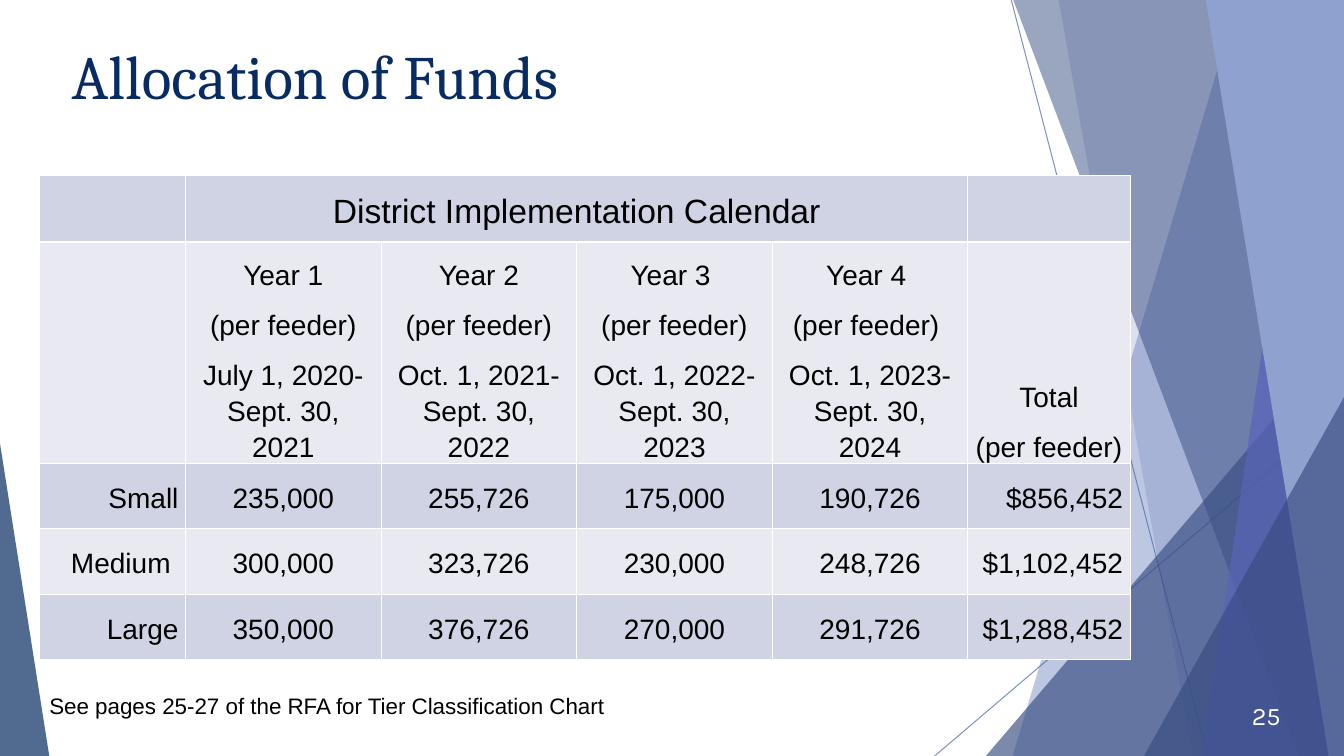
from dataclasses import dataclass

import pptx
import pptx.dml.color
import pptx.enum.shapes
import pptx.enum.text
import pptx.oxml
import pptx.oxml.ns
import pptx.util
from pptx.dml.color import RGBColor
from pptx.enum.text import MSO_ANCHOR, PP_ALIGN
from pptx.util import Inches

WHITE = RGBColor(0xFF, 0xFF, 0xFF)
BLACK = RGBColor(0x00, 0x00, 0x00)
NAVY = RGBColor(0x07, 0x2B, 0x62)
BLUE = RGBColor(0x4A, 0x66, 0xAC)
DEEP_BLUE = RGBColor(0x37, 0x4C, 0x81)
VIOLET = RGBColor(0x59, 0x63, 0xB8)
LIGHT_BLUE = RGBColor(0x8F, 0xA1, 0xCF)
BAND_DARK = RGBColor(0xD0, 0xD3, 0xE3)
BAND_LIGHT = RGBColor(0xE9, 0xEA, 0xF1)

RIGHT_EDGE = 13.33
FACET_BOTTOM = 7.51


@dataclass
class Ray:
    start: tuple[float, float]
    end: tuple[float, float]


@dataclass
class Facet:
    """A sheet running from its slanted left side to the right slide edge."""
    top_x: float
    bottom_x: float
    color: RGBColor
    opacity: int


@dataclass
class Peak:
    """A right triangle with its tip at a fraction of its width."""
    left: float
    top: float
    width: float
    height: float
    tip: float
    color: RGBColor
    opacity: int


@dataclass
class Year:
    title: str
    feeder: str
    period: str


@dataclass
class Tier:
    name: str
    amounts: list[str]
    total: str


RAYS = [Ray((10.03, 0), (11.98, 7.5)), Ray((RIGHT_EDGE, 4.04), (9.27, 7.5))]
BACKDROP = [
    Facet(12.28, 10.04, BLUE, 36),
    Facet(10.5, 11.83, BLUE, 20),
    Peak(9.77, 3.34, 3.56, 4.17, 1, DEEP_BLUE, 66),
    Facet(10.05, 12.89, DEEP_BLUE, 50),
    Facet(13.03, 11.92, VIOLET, 70),
    Facet(11.96, 13.18, LIGHT_BLUE, 100),
    Peak(11.34, 3.94, 1.99, 3.57, 1, DEEP_BLUE, 66),
    Peak(0, 4.4, 0.49, 3.11, 0, NAVY, 70),
]
YEARS = [
    Year("Year 1", "(per feeder)", "July 1, 2020-Sept. 30, 2021"),
    Year("Year 2", "(per feeder)", "Oct. 1, 2021-Sept. 30, 2022"),
    Year("Year 3 ", "(per feeder)", "Oct. 1, 2022-Sept. 30, 2023"),
    Year("Year 4 ", "(per feeder) ", "Oct. 1, 2023-Sept. 30, 2024"),
]
TIERS = [
    Tier("Small", ["235,000", "255,726", "175,000", "190,726"], "$856,452"),
    Tier("Medium ", ["300,000", "323,726", "230,000", "248,726"], "$1,102,452"),
    Tier("Large", ["350,000", "376,726", "270,000", "291,726"], "$1,288,452"),
]
COLUMN_WIDTHS = [1.45] + [1.94] * len(YEARS) + [1.61]
ROW_HEIGHTS = [0.66, 1.72] + [0.65] * len(TIERS)


def set_opacity(shape, percent: int) -> None:
    for color in shape.element.iter(pptx.oxml.ns.qn("a:srgbClr")):
        color.append(pptx.oxml.parse_xml(
            f'<a:alpha {pptx.oxml.ns.nsdecls("a")} val="{percent * 1000}"/>'))


def draw_ray(slide, ray: Ray) -> None:
    line = slide.shapes.add_connector(
        pptx.enum.shapes.MSO_CONNECTOR.STRAIGHT,
        *map(Inches, ray.start + ray.end))
    line.line.color.rgb = BLUE
    line.line.width = pptx.util.Pt(0.75)
    set_opacity(line, 70)
    line.element.spPr.append(
        pptx.oxml.parse_xml(f'<a:effectLst {pptx.oxml.ns.nsdecls("a")}/>'))


def draw_backdrop_part(slide, part: Facet | Peak) -> None:
    if isinstance(part, Facet):
        outline = slide.shapes.build_freeform(Inches(part.top_x), 0)
        corners = [(RIGHT_EDGE, 0), (RIGHT_EDGE, FACET_BOTTOM),
                   (part.bottom_x, FACET_BOTTOM)]
        outline.add_line_segments([(Inches(x), Inches(y)) for x, y in corners])
        shape = outline.convert_to_shape()
    else:
        shape = slide.shapes.add_shape(
            pptx.enum.shapes.MSO_SHAPE.ISOSCELES_TRIANGLE, Inches(part.left),
            Inches(part.top), Inches(part.width), Inches(part.height))
        shape.adjustments[0] = part.tip
    shape.shadow.inherit = False
    shape.line.fill.background()
    shape.fill.solid()
    shape.fill.fore_color.rgb = part.color
    if part.opacity < 100:
        set_opacity(shape, part.opacity)


def set_font(paragraph, name: str, size: float, color: RGBColor) -> None:
    paragraph.font.name = name
    paragraph.font.size = pptx.util.Pt(size)
    paragraph.font.color.rgb = color


def format_cell(cell, fill: RGBColor) -> None:
    """Give the cell thin white borders, a fill and its margins."""
    cell.margin_left = cell.margin_right = Inches(0.07)
    cell.margin_top = cell.margin_bottom = 0
    for side in "LRTB":
        cell._tc.get_or_add_tcPr().append(pptx.oxml.parse_xml(
            f'<a:ln{side} {pptx.oxml.ns.nsdecls("a")} w="12700"><a:solidFill>'
            f'<a:srgbClr val="{WHITE}"/></a:solidFill></a:ln{side}>'))
    cell.fill.solid()
    cell.fill.fore_color.rgb = fill


def write_cell(cell, text: str, align: PP_ALIGN, size: float = 20,
               anchor: MSO_ANCHOR = MSO_ANCHOR.MIDDLE) -> None:
    cell.text = text
    cell.vertical_anchor = anchor
    for paragraph in cell.text_frame.paragraphs:
        paragraph.alignment = align
        paragraph.line_spacing = 1.15
        paragraph.space_after = pptx.util.Pt(10)
        set_font(paragraph, "Arial", size, BLACK)


def draw_funds(slide) -> None:
    funds = slide.shapes.add_table(
        len(ROW_HEIGHTS), len(COLUMN_WIDTHS), Inches(0.39), Inches(1.74),
        Inches(sum(COLUMN_WIDTHS)), Inches(sum(ROW_HEIGHTS))).table
    funds.first_row = funds.horz_banding = False
    for column, width in zip(funds.columns, COLUMN_WIDTHS):
        column.width = Inches(width)
    for index, (row, height) in enumerate(zip(funds.rows, ROW_HEIGHTS)):
        row.height = Inches(height)
        for cell in row.cells:
            format_cell(cell, BAND_LIGHT if index % 2 else BAND_DARK)

    last = len(COLUMN_WIDTHS) - 1
    funds.cell(0, 1).merge(funds.cell(0, last - 1))
    write_cell(funds.cell(0, 1), "District Implementation Calendar",
               PP_ALIGN.CENTER, 24)
    headings = [f"{year.title}\n{year.feeder}\n{year.period}" for year in YEARS]
    for column, heading in enumerate(headings + ["Total\n(per feeder)"], 1):
        write_cell(funds.cell(1, column), heading, PP_ALIGN.CENTER,
                   anchor=MSO_ANCHOR.BOTTOM)
    for row, tier in enumerate(TIERS, 2):
        write_cell(funds.cell(row, 0), tier.name, PP_ALIGN.RIGHT)
        for column, amount in enumerate(tier.amounts, 1):
            write_cell(funds.cell(row, column), amount, PP_ALIGN.CENTER)
        write_cell(funds.cell(row, last), tier.total, PP_ALIGN.RIGHT)


def add_label(slide, box: tuple[float, float, float, float], text: str):
    label = slide.shapes.add_textbox(*map(Inches, box)).text_frame
    label.word_wrap = True
    label.text = text
    return label


def main() -> None:
    deck = pptx.Presentation()
    deck.slide_width, deck.slide_height = Inches(RIGHT_EDGE), Inches(7.5)
    slide = deck.slides.add_slide(deck.slide_layouts[5])
    for ray in RAYS:
        draw_ray(slide, ray)
    for part in BACKDROP:
        draw_backdrop_part(slide, part)

    title = slide.shapes.title
    title.element.getparent().append(title.element)  # in front of the backdrop
    title.left, title.top = Inches(0.61), Inches(0.28)
    title.width, title.height = Inches(9.83), Inches(1.44)
    heading = title.text_frame
    heading.text = "Allocation of Funds"
    heading.vertical_anchor = MSO_ANCHOR.TOP
    heading.margin_left = heading.margin_right = Inches(0.1)
    heading.margin_top = heading.margin_bottom = Inches(0.1)
    heading.paragraphs[0].alignment = PP_ALIGN.LEFT
    set_font(heading.paragraphs[0], "Cambria", 44, NAVY)

    page = add_label(slide, (12.05, 6.9, 0.75, 0.4), "25")
    page.vertical_anchor = MSO_ANCHOR.MIDDLE
    page.paragraphs[0].alignment = PP_ALIGN.RIGHT
    set_font(page.paragraphs[0], "Karla", 18, WHITE)

    draw_funds(slide)
    note = add_label(slide, (0.39, 6.82, 10.62, 0.37),
                     "See pages 25-27 of the RFA for Tier Classification Chart")
    set_font(note.paragraphs[0], "Arial", 16, BLACK)
    deck.save("out.pptx")


if __name__ == "__main__":
    main()
